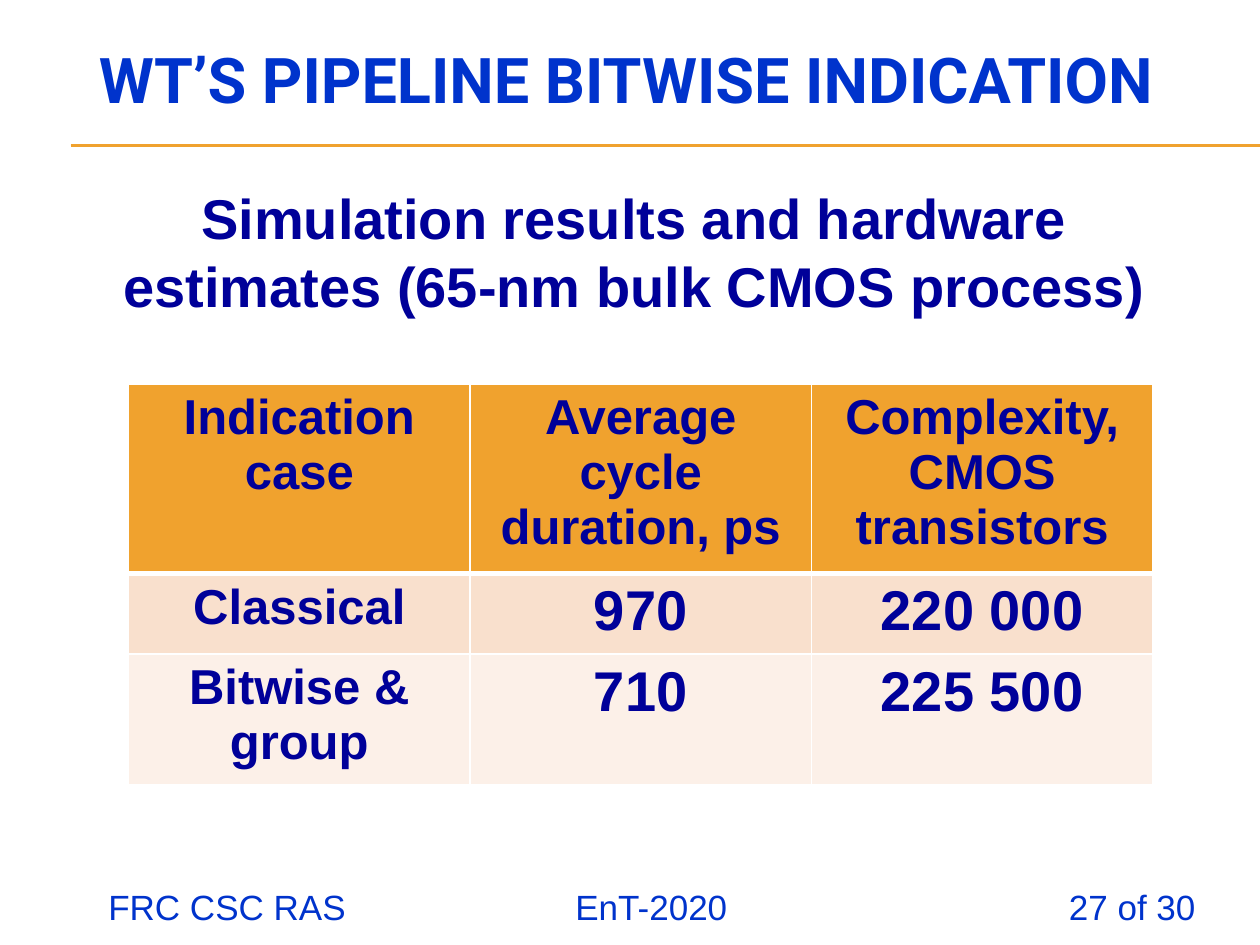
from dataclasses import dataclass

from lxml.etree import SubElement
from pptx import Presentation
from pptx.dml.color import RGBColor as Rgb
from pptx.enum.shapes import MSO_CONNECTOR as Connector
from pptx.enum.text import MSO_ANCHOR as Anchor, PP_ALIGN as Align
from pptx.oxml.ns import qn
from pptx.util import Inches, Pt


@dataclass(frozen=True)
class Theme:
    """Colours, fonts and type sizes of the deck."""
    blue: str = "0033CC"
    navy: str = "000099"
    orange: str = "F0A22E"
    peach: str = "F9E0CD"
    cream: str = "FCF0E8"
    white: str = "FFFFFF"
    title_font: str = "Roboto"
    body_font: str = "Arial"
    title_size: int = 36
    large_size: int = 32
    label_size: int = 28
    footer_size: int = 20


THEME = Theme()
HEADINGS = ["Indication case", "Average cycle duration, ps", "Complexity, CMOS transistors"]
RESULTS = [["Classical", "970", "220 000"], ["Bitwise & group", "710", "225 500"]]
ROW_HEIGHTS = [1.49, 0.64, 1.02]


def write(frame, text, size, color, font=THEME.body_font, bold=True, align=Align.CENTER):
    """Fill a text frame with one formatted paragraph and return it."""
    frame.word_wrap = True
    para = frame.paragraphs[0]
    para.alignment = align
    span = para.add_run()
    span.text = text
    for name, value in {"name": font, "size": Pt(size), "bold": bold}.items():
        setattr(span.font, name, value)
    span.font.color.rgb = Rgb.from_string(color)
    return para


def add_box(page, box):
    """Add a text box at left, top, width, height in inches."""
    return page.shapes.add_textbox(*map(Inches, box)).text_frame


def add_title(page, box):
    """Place the slide title."""
    frame = add_box(page, box)
    frame.vertical_anchor = Anchor.MIDDLE
    write(frame, "WT’S PIPELINE BITWISE INDICATION",
          THEME.title_size, THEME.blue, THEME.title_font)


def add_rules(page, left, right, tops):
    """Draw the thin rules under the title."""
    for top in tops:
        rule = page.shapes.add_connector(
            Connector.STRAIGHT, *map(Inches, (left, top, right, top)))
        rule.line.color.rgb = Rgb.from_string(THEME.orange)
        rule.line.width = Pt(0.75)
        SubElement(rule._element.spPr, qn("a:effectLst"))


def add_subtitle(page, box):
    """Place the heading above the table."""
    para = write(add_box(page, box),
                 "Simulation results and hardware estimates (65-nm bulk CMOS process)",
                 THEME.large_size, THEME.navy)
    para.space_after = Pt(6)


def set_borders(cell, widths):
    """Give a cell white borders of the given widths in points."""
    properties = cell._tc.get_or_add_tcPr()
    for index, (side, width) in enumerate(widths.items()):
        line = SubElement(properties, qn(f"a:{side}"), w=str(Pt(width)))
        properties.remove(line)
        properties.insert(index, line)
        SubElement(SubElement(line, qn("a:solidFill")), qn("a:srgbClr"), val=THEME.white)


def add_results(page, box):
    """Build the table of simulation results."""
    rows = [HEADINGS] + RESULTS
    table = page.shapes.add_table(len(rows), len(HEADINGS), *map(Inches, box)).table
    fills = [THEME.orange, THEME.peach, THEME.cream]
    for r, (texts, fill, height) in enumerate(zip(rows, fills, ROW_HEIGHTS)):
        table.rows[r].height = Inches(height)
        for c, text in enumerate(texts):
            cell = table.cell(r, c)
            cell.fill.solid()
            cell.fill.fore_color.rgb = Rgb.from_string(fill)
            size = THEME.large_size if r and c else THEME.label_size
            write(cell.text_frame, text, size, THEME.navy)
            set_borders(cell, {"lnL": 1, "lnR": 1, "lnT": 3 if r == 1 else 1,
                               "lnB": 3 if r == 0 else 1})


def add_footer(page, box):
    """Place the footer with a centred and a right-aligned tab stop."""
    frame = add_box(page, box)
    frame.margin_left, frame.margin_right = Inches(0.86), Inches(0.4)
    para = write(frame, "FRC CSC RAS\tEnT-2020\t27 of 30", THEME.footer_size,
                 THEME.blue, bold=False, align=Align.LEFT)
    stops = SubElement(para._p.get_or_add_pPr(), qn("a:tabLst"))
    for position, align in ((4.31, "ctr"), (8.63, "r")):
        SubElement(stops, qn("a:tab"), pos=str(Inches(position)), algn=align)


def main():
    """Build and save the deck."""
    deck = Presentation()
    deck.slide_width, deck.slide_height = Inches(10), Inches(7.5)
    page = deck.slides.add_slide(deck.slide_layouts[6])
    add_rules(page, 0.56, 10, (1.15, 1.16))
    add_title(page, (0.47, 0, 9, 1.25))
    add_footer(page, (0, 6.98, 10, 0.32))
    add_subtitle(page, (0.7, 1.41, 8.67, 1.18))
    add_results(page, (1.02, 3.05, 8.13, sum(ROW_HEIGHTS)))
    deck.save("out.pptx")


if __name__ == "__main__":
    main()
